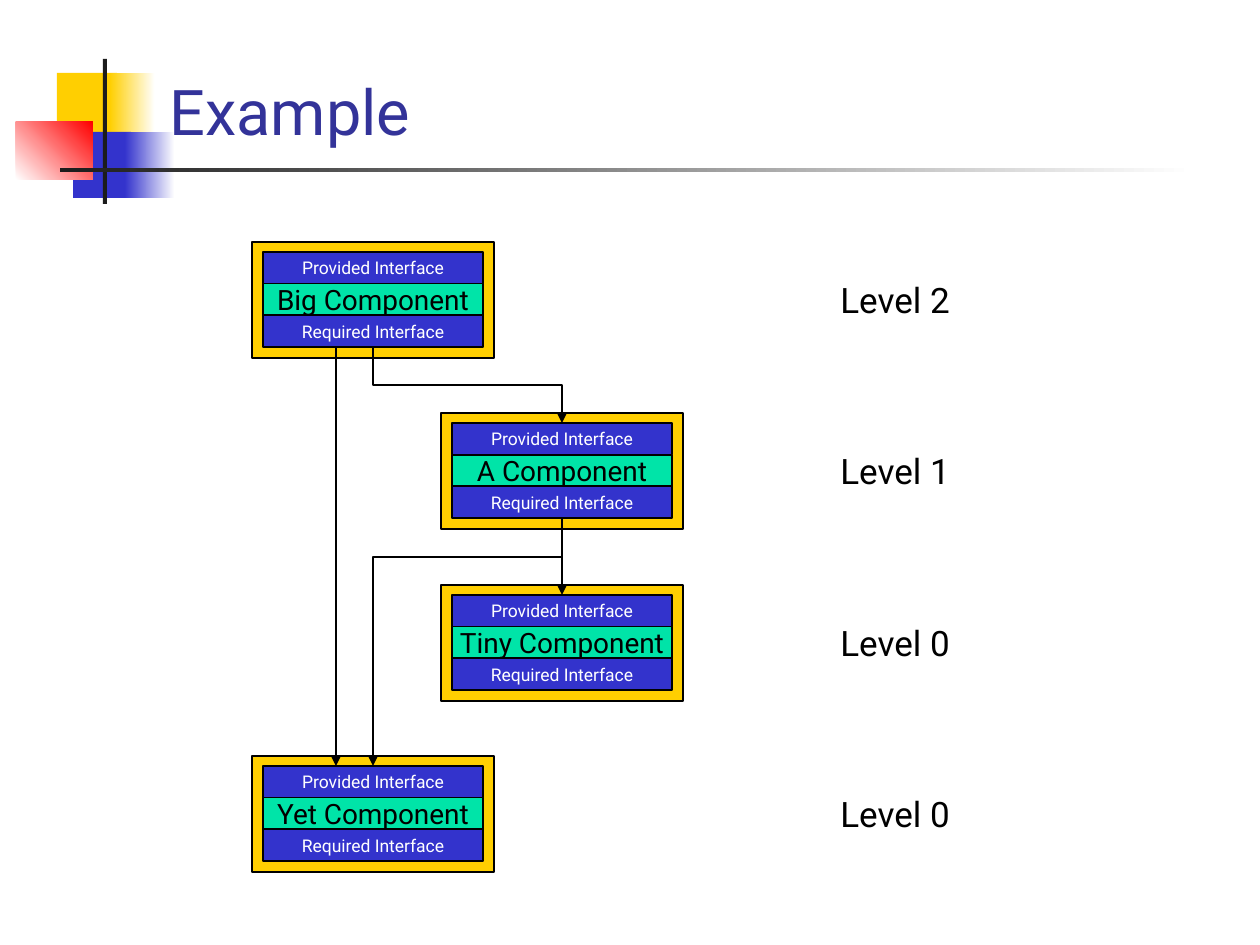
"""Build the slide showing components on levels, joined through their interfaces."""
from lxml import etree
from pptx import Presentation, util as u
from pptx.dml.color import RGBColor
from pptx.enum import shapes, text
from pptx.oxml.ns import qn

TITLE = "Example"
LEFT, RIGHT = 252, 441
COMPONENTS = [
    ("Big", LEFT, "Level 2"),
    ("A", RIGHT, "Level 1"),
    ("Tiny", RIGHT, "Level 0"),
    ("Yet", LEFT, "Level 0"),
]
COLORS = {
    "yellow": "FFCF01", "blue": "3333CC", "green": "00E4A8", "red": "FF0000",
    "white": "FFFFFF", "black": "000000", "dark": "1C1C1C", "title": "333399",
}
ORNAMENTS = [
    ((57, 73, 60, 66), ["yellow"], 0),
    ((110, 73, 45, 66), ["yellow", "white"], 0),
    ((73, 132, 58, 66), ["blue"], 0),
    ((125, 132, 50, 66), ["blue", "white"], 0),
    ((16, 122, 77, 58), ["white", "red"], 45),
    ((103, 59, 4, 145), ["dark"], 0),
    ((60, 168, 1134, 4), ["dark", "white"], 0),
]
BANDS = [
    ("Provided Interface", "blue", "white", 10),
    ("{} Component", "green", "black", 16),
    ("Required Interface", "blue", "white", 10),
]
FONT = "Roboto"
FIRST_TOP, PITCH = 242, 171.5
FRAME_W, FRAME_H = 242, 116
INSET_X, INSET_Y, BANDS_H = 11, 10, 95
LEVEL_X, LEVEL_DROP, LEVEL_SIZE = 828, 30, (135, 54)
DIRECT_X = 336


def px(value):
    return u.Emu(round(value * 914400 / 126))


def rgb(name):
    return RGBColor.from_string(COLORS[name])


def apply(target, values):
    for name, value in values.items():
        setattr(target, name, value)


def write(shape, words, size, color, align, **frame_values):
    frame = shape.text_frame
    apply(frame, frame_values)
    para = frame.paragraphs[0]
    para.alignment = align
    span = para.add_run()
    span.text = words
    apply(span.font, {"name": FONT, "size": u.Pt(size)})
    span.font.color.rgb = rgb(color)


def add_box(parent, area, colors, angle=0, outlined=True):
    box = parent.add_shape(shapes.MSO_SHAPE.RECTANGLE, *map(px, area))
    box.shadow.inherit = False
    if len(colors) == 1:
        box.fill.solid()
        box.fill.fore_color.rgb = rgb(colors[0])
    else:
        box.fill.gradient()
        box.fill.gradient_angle = angle
        for stop, color in zip(box.fill.gradient_stops, colors):
            stop.color.rgb = rgb(color)
    if outlined:
        box.line.color.rgb = rgb("black")
        box.line.width = u.Pt(1)
    else:
        box.line.fill.background()
    return box


def add_arrow(page, kind, start, end):
    arrow = page.shapes.add_connector(kind, *map(px, start + end))
    arrow.line.color.rgb = rgb("black")
    arrow.line.width = u.Pt(1)
    line = arrow.line._get_or_add_ln()
    etree.SubElement(line, qn("a:tailEnd"), type="triangle")
    etree.SubElement(arrow._element.spPr, qn("a:effectLst"))
    return arrow


def add_elbow(page, start, end, bend):
    """Draw a down-across-down elbow as a turned horizontal one."""
    (x1, y1), (x2, y2) = start, end
    middle_x, middle_y = (x1 + x2) / 2, (y1 + y2) / 2
    side = 1 if x2 > x1 else -1
    reach, half = side * (y2 - y1) / 2, abs(x2 - x1) / 2
    arrow = add_arrow(page, shapes.MSO_CONNECTOR.ELBOW,
                      (middle_x + reach, middle_y - half),
                      (middle_x - reach, middle_y + half))
    properties = arrow._element.spPr
    properties.find(qn("a:xfrm")).set("rot", str((270 if side > 0 else 90) * 60000))
    guides = properties.find(qn("a:prstGeom")).find(qn("a:avLst"))
    share = round((bend - y1) / (y2 - y1) * 100000)
    etree.SubElement(guides, qn("a:gd"), name="adj1", fmla=f"val {share}")


def add_component(page, name, left, top):
    add_box(page.shapes, (left, top, FRAME_W, FRAME_H), ["yellow"])
    group = page.shapes.add_group_shape().shapes
    height = BANDS_H / len(BANDS)
    bands = []
    for row, (words, fill, color, size) in enumerate(BANDS):
        area = (left + INSET_X, top + INSET_Y + row * height, FRAME_W - 2 * INSET_X, height)
        band = add_box(group, area, [fill])
        write(band, words.format(name), size, color, text.PP_ALIGN.CENTER,
              word_wrap=False, vertical_anchor=text.MSO_ANCHOR.MIDDLE)
        bands.append(band)
    return bands[0], bands[-1]


def main():
    deck = Presentation()
    deck.slide_width, deck.slide_height = u.Inches(10), u.Inches(7.5)
    page = deck.slides.add_slide(deck.slide_layouts[5])
    for area, colors, angle in ORNAMENTS:
        add_box(page.shapes, area, colors, angle, outlined=False)

    title = page.shapes.title
    apply(title, dict(zip(("left", "top", "width", "height"), map(px, (157, 49, 1074, 105)))))
    write(title, TITLE, 36, "title", text.PP_ALIGN.LEFT, word_wrap=True,
          auto_size=text.MSO_AUTO_SIZE.NONE, vertical_anchor=text.MSO_ANCHOR.BOTTOM)
    title.element.getparent().append(title.element)

    ports, provided, required = {}, {}, {}
    for row, (name, left, level) in enumerate(COMPONENTS):
        top = FIRST_TOP + int(row * PITCH)
        ports[name] = add_component(page, name, left, top)
        center = left + FRAME_W / 2
        provided[name] = (center, top + INSET_Y)
        required[name] = (center, top + INSET_Y + BANDS_H)
        label = page.shapes.add_textbox(*map(px, (LEVEL_X, top + LEVEL_DROP, *LEVEL_SIZE)))
        write(label, level, 20, "black", text.PP_ALIGN.LEFT, word_wrap=False,
              auto_size=text.MSO_AUTO_SIZE.SHAPE_TO_FIT_TEXT)

    straight = shapes.MSO_CONNECTOR.STRAIGHT
    add_arrow(page, straight, (DIRECT_X, required["Big"][1]), (DIRECT_X, provided["Yet"][1]))
    joined = add_arrow(page, straight, required["A"], provided["Tiny"])
    joined.begin_connect(ports["A"][1], 2)
    joined.end_connect(ports["Tiny"][0], 0)
    add_elbow(page, required["A"], provided["Yet"], 557)
    add_elbow(page, required["Big"], provided["A"], 385)
    deck.save("out.pptx")


if __name__ == "__main__":
    main()
